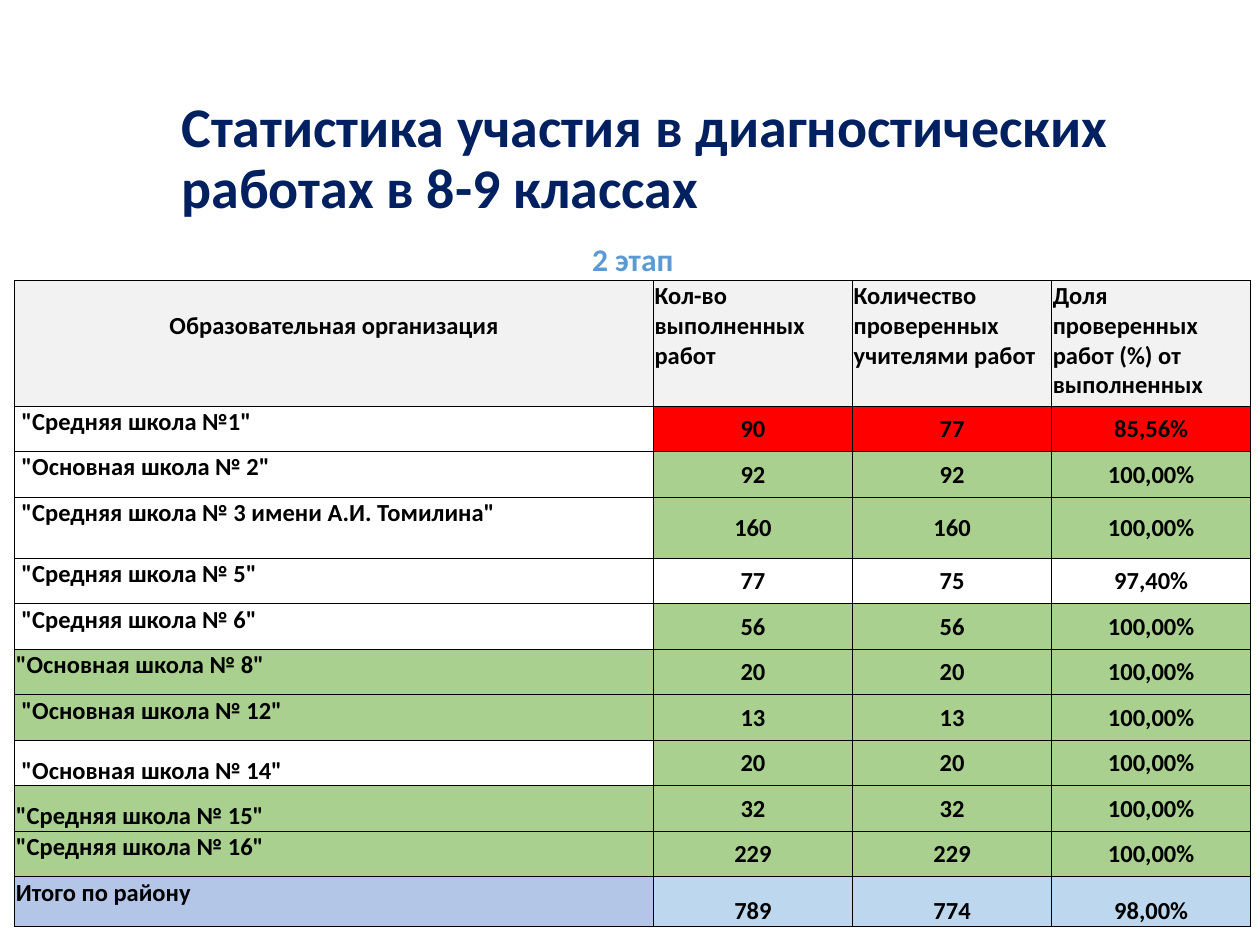
from lxml import etree
from pptx import Presentation
from pptx.dml.color import RGBColor
from pptx.enum.text import MSO_ANCHOR, MSO_AUTO_SIZE, PP_ALIGN
from pptx.oxml.ns import qn
from pptx.util import Pt

TOP, MIDDLE, BOTTOM = MSO_ANCHOR.TOP, MSO_ANCHOR.MIDDLE, MSO_ANCHOR.BOTTOM
LEFT, CENTER = PP_ALIGN.LEFT, PP_ALIGN.CENTER
NO_AUTOFIT = MSO_AUTO_SIZE.NONE

FONT = "Calibri"
BLACK, NAVY, BLUE = "000000", "002060", "5B9BD5"
GRAY, RED, GREEN = "F2F2F2", "FF0000", "A9D08E"
TOTAL_NAME, TOTAL_VALUE = "B4C6E7", "BDD7EE"
SIDES = ("L", "R", "T", "B")
MARGIN, INDENT = 0.7, 3.9

STAGE = "2 этап"
HEADERS = ["Образовательная организация", "Кол-во выполненных работ",
           "Количество проверенных учителями работ",
           "Доля проверенных работ (%) от выполненных"]
# Name, completed, checked, share, name fill, value fill, name anchor, name margin
SCHOOLS = [
    ('"Средняя школа №1"', "90", "77", "85,56%", None, RED, TOP, INDENT),
    ('"Основная школа № 2"', "92", "92", "100,00%", None, GREEN, TOP, INDENT),
    ('"Средняя школа № 3 имени А.И. Томилина"', "160", "160", "100,00%",
     None, GREEN, TOP, INDENT),
    ('"Средняя школа № 5"', "77", "75", "97,40%", None, None, TOP, INDENT),
    ('"Средняя школа № 6"', "56", "56", "100,00%", None, GREEN, TOP, INDENT),
    ('"Основная школа № 8"', "20", "20", "100,00%", GREEN, GREEN, TOP, MARGIN),
    ('"Основная школа № 12"', "13", "13", "100,00%", GREEN, GREEN, TOP, INDENT),
    ('"Основная школа № 14"', "20", "20", "100,00%", None, GREEN, BOTTOM, INDENT),
    ('"Средняя школа № 15"', "32", "32", "100,00%", GREEN, GREEN, BOTTOM, MARGIN),
    ('"Средняя школа № 16"', "229", "229", "100,00%", GREEN, GREEN, TOP, MARGIN),
]
TOTAL = ["Итого по району", "789", "774", "98,00%"]
COLUMN_WIDTHS = [365, 113.8, 113.8, 113.8]
ROW_HEIGHTS = [31, 72, 26, 26, 35] + [26] * 7 + [28.4]


def color(value):
    return RGBColor.from_string(value)


def format_text(paragraph, size, font_color, alignment):
    paragraph.alignment = alignment
    for run in paragraph.runs:
        run.font.name = FONT
        run.font.size = Pt(size)
        run.font.bold = True
        run.font.color.rgb = color(font_color)


def set_borders(cell, visible_sides):
    properties = cell._tc.get_or_add_tcPr()
    for side in SIDES:
        line = etree.SubElement(properties, qn(f"a:ln{side}"), w=str(Pt(0.5)))
        if side in visible_sides:
            fill = etree.SubElement(line, qn("a:solidFill"))
            etree.SubElement(fill, qn("a:srgbClr"), val=BLACK)
        else:
            etree.SubElement(line, qn("a:noFill"))


def fill_cell(cell, text, fill=None, anchor=TOP, alignment=LEFT, size=14,
              font_color=BLACK, margin_left=MARGIN, margin_top=MARGIN, sides=SIDES):
    cell.text_frame.text = text
    format_text(cell.text_frame.paragraphs[0], size, font_color, alignment)
    cell.vertical_anchor = anchor
    cell.margin_left, cell.margin_right = Pt(margin_left), Pt(MARGIN)
    cell.margin_top, cell.margin_bottom = Pt(margin_top), Pt(0)
    set_borders(cell, sides)
    if fill:
        cell.fill.solid()
        cell.fill.fore_color.rgb = color(fill)
    else:
        cell.fill.background()


def add_title(slide):
    title = slide.shapes.title
    title.left, title.top = Pt(96.5), Pt(53.3)
    title.width, title.height = Pt(573.8), Pt(76.3)
    text_frame = title.text_frame
    text_frame.text = "Статистика участия в диагностических работах в 8-9 классах"
    text_frame.word_wrap = True
    text_frame.auto_size = NO_AUTOFIT
    text_frame.vertical_anchor = MIDDLE
    paragraph = text_frame.paragraphs[0]
    paragraph.line_spacing = 0.9
    format_text(paragraph, 32, NAVY, LEFT)


def add_values(table, row, values, fill, anchor):
    for column, value in enumerate(values, 1):
        fill_cell(table.cell(row, column), value, fill, anchor, CENTER)


def add_statistics(slide):
    table = slide.shapes.add_table(
        len(ROW_HEIGHTS), len(COLUMN_WIDTHS), Pt(8.4), Pt(129),
        Pt(sum(COLUMN_WIDTHS)), Pt(sum(ROW_HEIGHTS))).table
    table.first_row = table.horz_banding = False
    for column, width in zip(table.columns, COLUMN_WIDTHS):
        column.width = Pt(width)
    for row, height in zip(table.rows, ROW_HEIGHTS):
        row.height = Pt(height)

    # Stage caption across all columns
    for column in range(len(COLUMN_WIDTHS)):
        fill_cell(table.cell(0, column), "" if column else STAGE, None, BOTTOM,
                  CENTER, 18, BLUE, sides=("B",))
    table.cell(0, 0).merge(table.cell(0, len(COLUMN_WIDTHS) - 1))

    # Column headers, the first one a line lower
    fill_cell(table.cell(1, 0), HEADERS[0], GRAY, alignment=CENTER, margin_top=17.8)
    for column, header in enumerate(HEADERS[1:], 1):
        fill_cell(table.cell(1, column), header, GRAY)

    # Schools
    for row, school in enumerate(SCHOOLS, 2):
        name, *values, name_fill, value_fill, anchor, margin = school
        fill_cell(table.cell(row, 0), name, name_fill, anchor, margin_left=margin)
        add_values(table, row, values, value_fill, MIDDLE)

    # District total
    last = len(ROW_HEIGHTS) - 1
    fill_cell(table.cell(last, 0), TOTAL[0], TOTAL_NAME)
    add_values(table, last, TOTAL[1:], TOTAL_VALUE, BOTTOM)


def main():
    presentation = Presentation()
    presentation.slide_width, presentation.slide_height = Pt(720), Pt(540)
    slide = presentation.slides.add_slide(presentation.slide_layouts[5])
    add_title(slide)
    add_statistics(slide)
    presentation.save("out.pptx")


if __name__ == "__main__":
    main()
